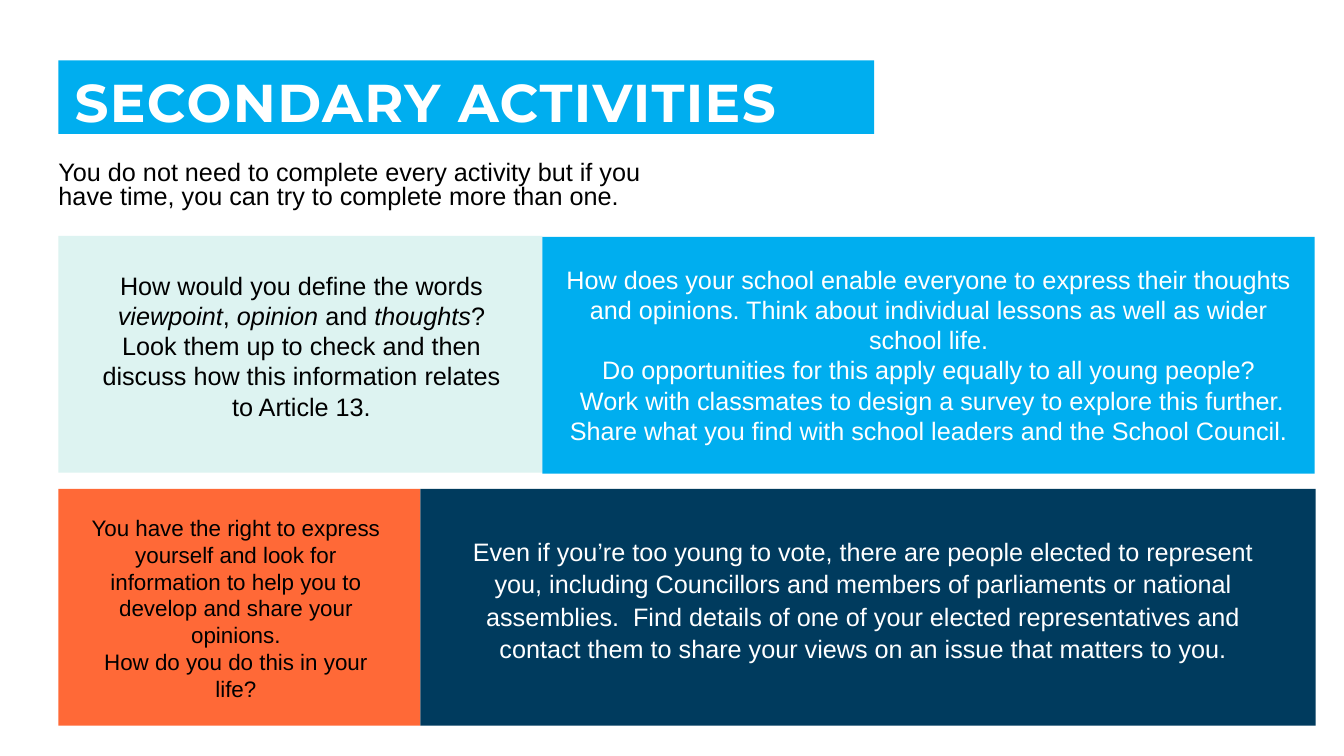
from pptx import Presentation
from pptx.dml.color import RGBColor
from pptx.enum.shapes import MSO_SHAPE
from pptx.enum.text import MSO_ANCHOR, PP_ALIGN
from pptx.util import Inches, Pt

COLORS = {
    "sky": "00AEEF", "mint": "DDF3F1", "orange": "FF6937",
    "navy": "003B5E", "black": "000000", "white": "FFFFFF",
}

deck = Presentation()
deck.slide_width, deck.slide_height = Inches(13.33), Inches(7.5)
slide = deck.slides.add_slide(deck.slide_layouts[6])


def add_block(place, color):
    block = slide.shapes.add_shape(MSO_SHAPE.RECTANGLE, *map(Inches, place))
    block.shadow.inherit = False
    block.fill.solid()
    block.fill.fore_color.rgb = RGBColor.from_string(COLORS[color])
    block.line.fill.background()
    return block


def write(frame, lines, size, color, align=PP_ALIGN.CENTER, face="Arial"):
    """Fill a frame; words between asterisks are italic."""
    frame.word_wrap = True
    for i, line in enumerate(lines):
        para = frame.paragraphs[0] if i == 0 else frame.add_paragraph()
        para.alignment = align
        para.font.size, para.font.name = Pt(size), face
        para.font.color.rgb = RGBColor.from_string(COLORS[color])
        for j, part in enumerate(line.split("*")):
            run = para.add_run()
            run.text = part
            if j % 2:
                run.font.italic = True


# Title bar
title = add_block((0.58, 0.6, 8.09, 0.73), "sky").text_frame
title.vertical_anchor = MSO_ANCHOR.MIDDLE
title.margin_left, title.margin_top = Inches(0.16), Inches(0.16)
title.margin_right, title.margin_bottom = Inches(0.12), Inches(0)
write(title, ["SECONDARY ACTIVITIES"], 38, "white", PP_ALIGN.LEFT, "Montserrat")
head = title.paragraphs[0]
head.line_spacing = 0.9
head.font.bold = True
head.runs[0].font._element.set("spc", "100")

# Introduction
intro = slide.shapes.add_textbox(
    Inches(0.58), Inches(1.56), Inches(6.21), Inches(0.62)).text_frame
intro.margin_left = Inches(0)
write(intro, ["You do not need to complete every activity but if you have time, "
              "you can try to complete more than one."], 18, "black", PP_ALIGN.LEFT)
intro.paragraphs[0].line_spacing = 0.8

# Activity cards: block, fill, text box, size, text colour, lines
cards = [
    ((0.58, 2.34, 4.8, 2.35), "mint", (0.88, 2.63, 4.22, 1.62), 18, "black", [
        "How would you define the words *viewpoint*, *opinion* and *thoughts*? "
        "Look them up to check and then discuss how this information relates "
        "to Article 13."]),
    ((0.58, 4.85, 3.59, 2.35), "orange", (0.81, 5.05, 3.06, 2.19), 16, "black", [
        "You have the right to express yourself and look for information to "
        "help you to develop and share your opinions.",
        "How do you do this in your life?"]),
    ((5.38, 2.35, 7.66, 2.35), "sky", (5.49, 2.57, 7.44, 2.19), 18, "white", [
        "How does your school enable everyone to express their thoughts and "
        "opinions. Think about individual lessons as well as wider school life.",
        "Do opportunities for this apply equally to all young people?",
        " Work with classmates to design a survey to explore this further. "
        "Share what you find with school leaders and the School Council."]),
    ((4.17, 4.85, 8.88, 2.35), "navy", (4.43, 5.25, 8.26, 1.38), 18, "white", [
        "Even if you’re too young to vote, there are people elected to "
        "represent you, including Councillors and members of parliaments or "
        "national assemblies.  Find details of one of your elected "
        "representatives and contact them to share your views on an issue "
        "that matters to you."]),
]
for place, fill, area, size, color, lines in cards:
    add_block(place, fill)
    frame = slide.shapes.add_textbox(*map(Inches, area)).text_frame
    write(frame, lines, size, color)

# Looser lines in the last card
frame.paragraphs[0].line_spacing = 1.07
frame.paragraphs[0].space_after = Pt(8)

deck.save("out.pptx")
